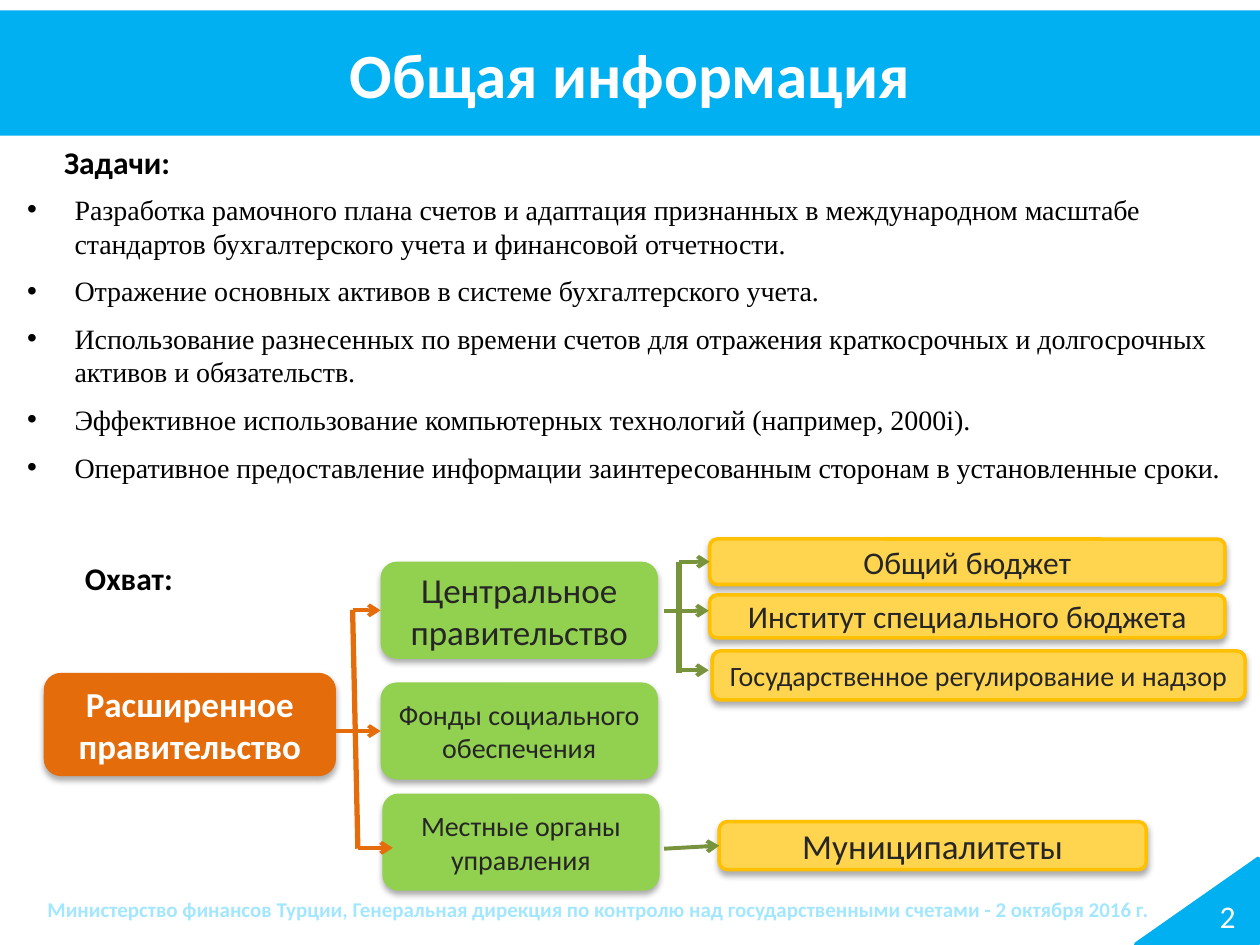
from lxml import etree
from pptx import Presentation
from pptx.dml.color import RGBColor
from pptx.enum import shapes, text
from pptx.oxml import ns
from pptx.util import Pt

BLUE = RGBColor(0x00, 0xB0, 0xF0)
PALE_BLUE = RGBColor(0xA3, 0xE7, 0xFF)
ORANGE = RGBColor(0xE4, 0x6C, 0x0A)
GREEN = RGBColor(0x92, 0xD0, 0x50)
OLIVE = RGBColor(0x77, 0x93, 0x3C)
YELLOW = RGBColor(0xFF, 0xD5, 0x4F)
GOLD = RGBColor(0xFF, 0xC0, 0x00)
DARK = RGBColor(0x26, 0x26, 0x26)
BLACK = RGBColor(0x00, 0x00, 0x00)
WHITE = RGBColor(0xFF, 0xFF, 0xFF)

LEFT_SIDE = 1
TASKS = [
    "Разработка рамочного плана счетов и адаптация признанных в международном масштабе "
    "стандартов бухгалтерского учета и финансовой отчетности.",
    "Отражение основных активов в системе бухгалтерского учета.",
    "Использование разнесенных по времени счетов для отражения краткосрочных и "
    "долгосрочных активов и обязательств.",
    "Эффективное использование компьютерных технологий (например, 2000i).",
    "Оперативное предоставление информации заинтересованным сторонам в установленные сроки.",
]


def add_child(parent, tag, **attributes):
    return etree.SubElement(parent, ns.qn(tag), attributes)


def add_run(paragraph, words, size, color, bold=False, font="Calibri"):
    run = paragraph.add_run()
    run.text = words
    run.font.name = font
    run.font.size = Pt(size)
    run.font.bold = bold
    run.font.color.rgb = color


def add_filled_shape(slide, kind, box, fill, line=None):
    shape = slide.shapes.add_shape(kind, *map(Pt, box))
    shape.shadow.inherit = False
    shape.fill.solid()
    shape.fill.fore_color.rgb = fill
    if line is None:
        shape.line.fill.background()
    else:
        shape.line.color.rgb = line
        shape.line.width = Pt(2)
    frame = shape.text_frame
    frame.word_wrap = True
    frame.vertical_anchor = text.MSO_ANCHOR.MIDDLE
    frame.paragraphs[0].alignment = text.PP_ALIGN.CENTER
    return shape


def add_soft_shadow(shape):
    effects = shape._element.spPr.find(ns.qn("a:effectLst"))
    shadow = add_child(effects, "a:outerShdw", blurRad=str(Pt(3.5)), dist=str(Pt(2.2)),
                       dir="5400000", rotWithShape="0")
    add_child(add_child(shadow, "a:srgbClr", val="000000"), "a:alpha", val="32000")


def add_title_band(slide, box):
    band = add_filled_shape(slide, shapes.MSO_SHAPE.RECTANGLE, box, BLUE)
    add_run(band.text_frame.paragraphs[0], "Общая информация", 36, WHITE, bold=True)


def add_label(slide, box, words, size=18, color=BLACK):
    frame = slide.shapes.add_textbox(*map(Pt, box)).text_frame
    frame.word_wrap = True
    add_run(frame.paragraphs[0], words, size, color, bold=True)


def add_task_list(slide, box):
    frame = slide.shapes.add_textbox(*map(Pt, box)).text_frame
    frame.word_wrap = True
    for index, task in enumerate(TASKS):
        paragraph = frame.add_paragraph() if index else frame.paragraphs[0]
        properties = paragraph._p.get_or_add_pPr()
        properties.set("marL", str(Pt(27)))
        properties.set("indent", str(Pt(-27)))
        if index:
            paragraph.space_before = Pt(8)
        add_child(properties, "a:buFont", typeface="Arial")
        add_child(properties, "a:buChar", char="•")
        add_run(paragraph, task, 16, BLACK, font="Times New Roman")


def add_line(slide, start, end, color, width=2.25, arrow=False, target=None):
    line = slide.shapes.add_connector(shapes.MSO_CONNECTOR.STRAIGHT, *map(Pt, start + end))
    line.line.color.rgb = color
    line.line.width = Pt(width)
    if arrow:
        add_child(line.line._get_or_add_ln(), "a:tailEnd", type="arrow")
    add_child(line._element.spPr, "a:effectLst")
    if target is not None:
        line.end_connect(target, LEFT_SIDE)


def add_scope_diagram(slide, box):
    left, top, width, height = box

    def at(x, y):
        return left + x, top + y

    def node(x, y, node_width, node_height, words, size, fill, line=None, color=DARK):
        shape = add_filled_shape(slide, shapes.MSO_SHAPE.ROUNDED_RECTANGLE,
                                 at(x, y) + (node_width, node_height), fill, line)
        add_soft_shadow(shape)
        frame = shape.text_frame
        frame.margin_left = frame.margin_right = Pt(5)
        frame.margin_top = frame.margin_bottom = 0
        add_run(frame.paragraphs[0], words, size, color, bold=color == WHITE)
        return shape

    def branch(x, y, words, size):
        return node(x, y, 158.5, 55.5, words, size, GREEN)

    def leaf(x, y, leaf_width, leaf_height, words, size):
        return node(x, y, leaf_width, leaf_height, words, size, YELLOW, GOLD)

    node(0, 76.5, 167, 59, "Расширенное правительство", 20, ORANGE, color=WHITE)
    central = branch(192.5, 13, "Центральное правительство", 20)
    social = branch(192.5, 82, "Фонды социального обеспечения", 16)
    branch(193.5, 145.5, "Местные органы управления", 16)
    general = leaf(380.5, 0, 294.5, 26, "Общий бюджет", 18)
    leaf(380.5, 32, 294.5, 24.5, "Институт специального бюджета", 18)
    leaf(382, 64, width - 382, 28, "Государственное регулирование и надзор", 16)
    municipal = leaf(386, 161.5, 244, 27.5, "Муниципалитеты", 20)

    add_line(slide, at(176.5, 40.5), at(179.5, 177), ORANGE, width=3)
    add_line(slide, at(167, 109.75), at(176.5, 109.75), ORANGE)
    for x, end_x, y, target in [(176.5, 192.5, 40.75, central),
                                (176.5, 192.5, 109.75, social),
                                (179.5, 199.5, 176.5, None)]:
        add_line(slide, at(x, y), at(end_x, y), ORANGE, arrow=True, target=target)

    add_line(slide, at(363, 13), at(363, 76.5), OLIVE, width=3)
    add_line(slide, at(354.5, 41), at(363, 41), OLIVE)
    for y, target in [(13, general), (41, None), (75, None)]:
        add_line(slide, at(363, y), at(380, y), OLIVE, arrow=True, target=target)
    add_line(slide, at(354.5, 177), at(386, 175.25), OLIVE, arrow=True, target=municipal)


def add_page_corner(slide, box):
    """Right triangle turned a quarter left, with the page number kept upright."""
    left, top, width, height = box
    turned = (left + (width - height) / 2, top + (height - width) / 2, height, width)
    corner = add_filled_shape(slide, shapes.MSO_SHAPE.RIGHT_TRIANGLE, turned, BLUE, BLUE)
    corner.rotation = 270
    frame = corner.text_frame
    frame._txBody.bodyPr.set("vert", "vert")
    frame.margin_left = frame.margin_right = frame.margin_top = frame.margin_bottom = 0
    add_run(frame.paragraphs[0], "2", 18, WHITE)


def main():
    presentation = Presentation()
    presentation.slide_width, presentation.slide_height = Pt(720), Pt(540)
    slide = presentation.slides.add_slide(presentation.slide_layouts[6])
    add_task_list(slide, (8.5, 106.5, 711.5, 197.5))
    add_title_band(slide, (0, 6, 720, 71.5))
    add_label(slide, (29.5, 78, 311, 29), "Задачи:")
    add_label(slide, (41.5, 316, 160, 29), "Охват:")
    add_label(slide, (20, 508.5, 657.5, 21.5),
              "Министерство финансов Турции, Генеральная дирекция по контролю над "
              "государственными счетами - 2 октября 2016 г.", 12, PALE_BLUE)
    add_scope_diagram(slide, (25, 308, 686.5, 201))
    add_page_corner(slide, (649, 490.5, 70, 49))
    presentation.save("out.pptx")


if __name__ == "__main__":
    main()
